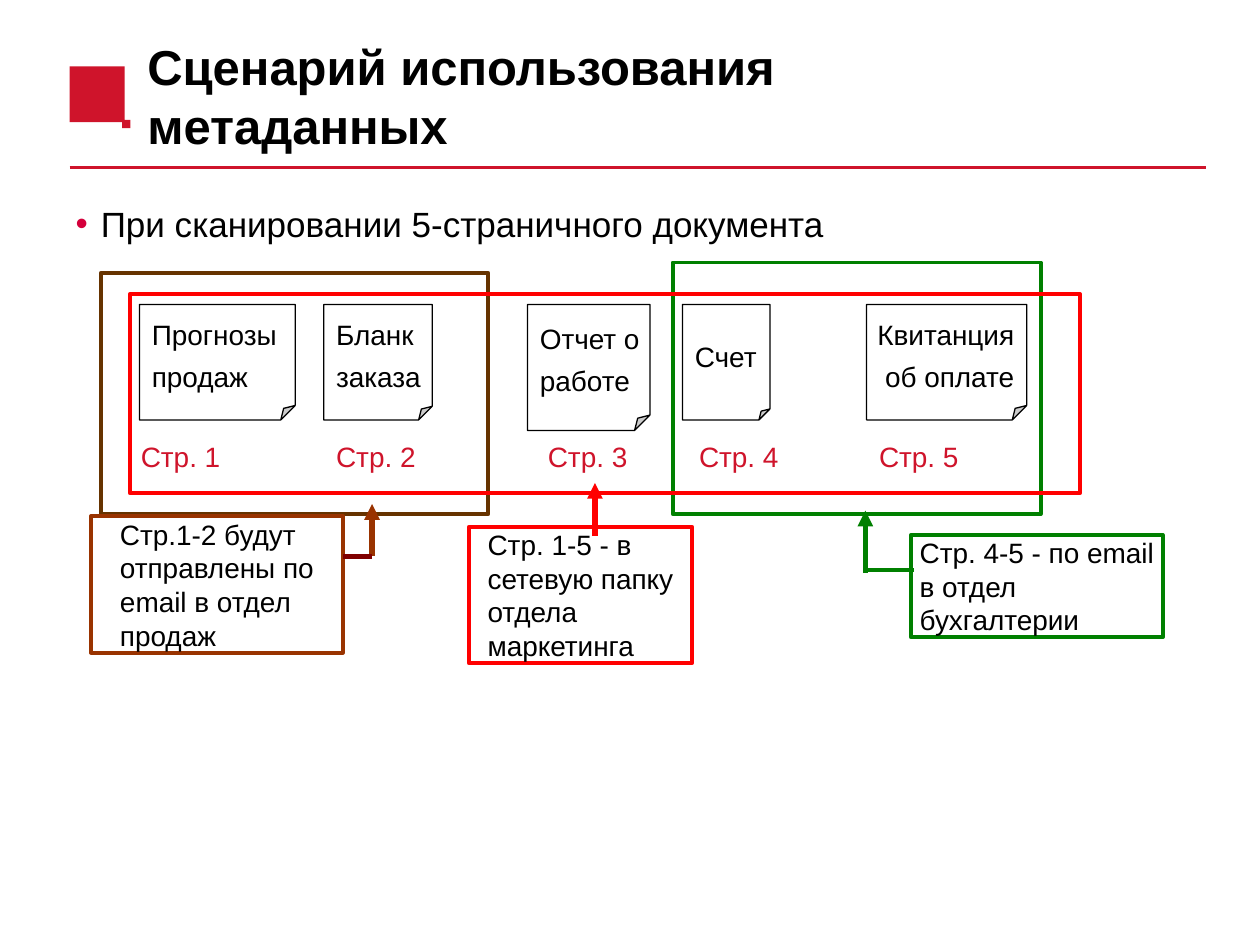
from lxml import etree
from pptx import Presentation
from pptx.dml import color
from pptx.enum import shapes, text
from pptx.oxml import ns
from pptx.util import Pt

FONT = "Arial"
BLACK, WHITE, CRIMSON = "000000", "FFFFFF", "CF142B"
RED, GREEN, BROWN, RUST, MAROON = "FF0000", "008000", "663300", "993300", "800000"
LEFT, RIGHT = text.PP_ALIGN.LEFT, text.PP_ALIGN.RIGHT

TITLE = "Сценарий использования метаданных"
BULLET = "При сканировании 5-страничного документа"
MARK = [(39.8, 38), (71.2, 38), (71.2, 68.5), (74.5, 68.5), (74.5, 73.2),
        (69.8, 73.2), (69.8, 69.8), (39.8, 69.8)]
PAGE_TOP, LABEL_TOP, LABEL_HEIGHT = 174, 251.5, 18
PAGES = [
    (["Прогнозы", "продаж"], 79.7, 89, 66, LEFT, 73.4, 82),
    (["Бланк", "заказа"], 185, 62, 66, LEFT, 185, 73),
    (["Отчет о", "работе"], 301.4, 70, 72, LEFT, 306, 78),
    (["Счет"], 390, 50, 66, LEFT, 392.4, 92),
    (["Квитанция", "об оплате"], 495.2, 91.5, 66, RIGHT, 495.2, 63),
]
FRAMES = [
    (GREEN, 384.5, 150, 210.2, 143.8),
    (BROWN, 57.6, 156, 221.5, 137.8),
    (RED, 74.2, 168, 543, 113.8),
]
CALLOUTS = [
    ("Стр.1-2 будут отправлены по email в отдел продаж", RUST, 52, 295, 144, 78),
    ("Стр. 1-5 - в сетевую папку отдела маркетинга", RED, 268, 301, 127.5, 78),
    ("Стр. 4-5 - по email в отдел бухгалтерии", GREEN, 520.5, 305.8, 144, 58.3),
]
LINES = [
    (CRIMSON, 2, 39.8, 95.6, 689, 95.6, False),
    (RED, 3, 340, 306, 340, 276, True),
    (GREEN, 3, 494.5, 327.5, 494.5, 291.8, True),
    (RUST, 3, 212.6, 318, 212.6, 288, True),
    (MAROON, 3, 212.6, 318, 196, 318, False),
    (GREEN, 2.25, 494.5, 325.5, 522, 325.5, False),
]


def rgb(value):
    return color.RGBColor.from_string(value)


def child(parent, tag, **attributes):
    return etree.SubElement(parent, ns.qn(tag), attributes)


def place(shape, left, top, width, height):
    shape.left, shape.top = Pt(left), Pt(top)
    shape.width, shape.height = Pt(width), Pt(height)


def paint(shape, fill=None, line=None, weight=2.25):
    shape.shadow.inherit = False
    if fill:
        shape.fill.solid()
        shape.fill.fore_color.rgb = rgb(fill)
    else:
        shape.fill.background()
    if line:
        shape.line.color.rgb = rgb(line)
        shape.line.width = Pt(weight)
    else:
        shape.line.fill.background()


def write(shape, lines, size=16, ink=BLACK, bold=False, align=LEFT, wrap=True,
          anchor=text.MSO_ANCHOR.MIDDLE):
    frame = shape.text_frame
    frame.word_wrap = wrap
    frame.auto_size = text.MSO_AUTO_SIZE.NONE
    frame.vertical_anchor = anchor
    for index, line in enumerate(lines):
        para = frame.add_paragraph() if index else frame.paragraphs[0]
        para.alignment = align
        para.space_before = Pt(0.3 * size if index else 0)
        span = para.add_run()
        span.text = line
        span.font.name = FONT
        span.font.size = Pt(size)
        span.font.bold = bold
        span.font.color.rgb = rgb(ink)
    return frame


def add_box(page, kind, left, top, width, height, **style):
    box = page.shapes.add_shape(kind, Pt(left), Pt(top), Pt(width), Pt(height))
    paint(box, **style)
    return box


def add_line(page, ink, weight, x1, y1, x2, y2, arrow):
    line = page.shapes.add_connector(shapes.MSO_CONNECTOR.STRAIGHT,
                                     Pt(x1), Pt(y1), Pt(x2), Pt(y2))
    line.line.color.rgb = rgb(ink)
    line.line.width = Pt(weight)
    props = line._element.spPr
    if arrow:
        child(props.find(ns.qn("a:ln")), "a:tailEnd", type="triangle")
    child(props, "a:effectLst")


def add_bullet(para, mark, ink, indent):
    props = para._p.get_or_add_pPr()
    props.set("marL", str(Pt(indent)))
    props.set("indent", str(-Pt(indent)))
    child(child(props, "a:buClr"), "a:srgbClr", val=ink)
    child(props, "a:buFont", typeface=FONT)
    child(props, "a:buChar", char=mark)


def set_fold(sheet, share):
    guides = sheet._element.spPr.find(".//" + ns.qn("a:avLst"))
    child(guides, "a:gd", name="adj", fmla=f"val {round(share * 100000)}")


def main():
    deck = Presentation()
    deck.slide_width, deck.slide_height = Pt(720), Pt(540)
    page = deck.slides.add_slide(deck.slide_layouts[1])
    rect, folded = shapes.MSO_SHAPE.RECTANGLE, shapes.MSO_SHAPE.FOLDED_CORNER

    outline = page.shapes.build_freeform(Pt(MARK[0][0]), Pt(MARK[0][1]))
    outline.add_line_segments([(Pt(x), Pt(y)) for x, y in MARK[1:]], close=True)
    paint(outline.convert_to_shape(), fill=CRIMSON)

    title, body = page.placeholders
    place(title, 77, 28, 510, 53.3)
    write(title, [TITLE], size=28, bold=True)
    place(body, 36, 112.3, 636, 31.7)
    frame = body.text_frame
    add_bullet(frame.paragraphs[0], "•", "D4003B", 14.4)
    write(body, [BULLET], size=20, anchor=text.MSO_ANCHOR.TOP)

    for number, (lines, left, width, height, align, label_left, label_width) in enumerate(PAGES, 1):
        sheet = add_box(page, folded, left, PAGE_TOP, width, height,
                        fill=WHITE, line=BLACK, weight=0.75)
        set_fold(sheet, 0.125)
        write(sheet, lines, align=align, wrap=False)
        label = add_box(page, rect, label_left, LABEL_TOP, label_width, LABEL_HEIGHT, fill=WHITE)
        write(label, [f"Стр. {number}"], ink=CRIMSON, wrap=False)

    for ink, *area in FRAMES:
        add_box(page, rect, *area, line=ink)

    for words, ink, *area in CALLOUTS:
        frame = write(add_box(page, rect, *area, line=ink), [words])
        frame.margin_left = frame.margin_right = frame.margin_top = frame.margin_bottom = 0
        frame._txBody.bodyPr.set("anchorCtr", "1")

    for line in LINES:
        add_line(page, *line)

    deck.save("out.pptx")


if __name__ == "__main__":
    main()
